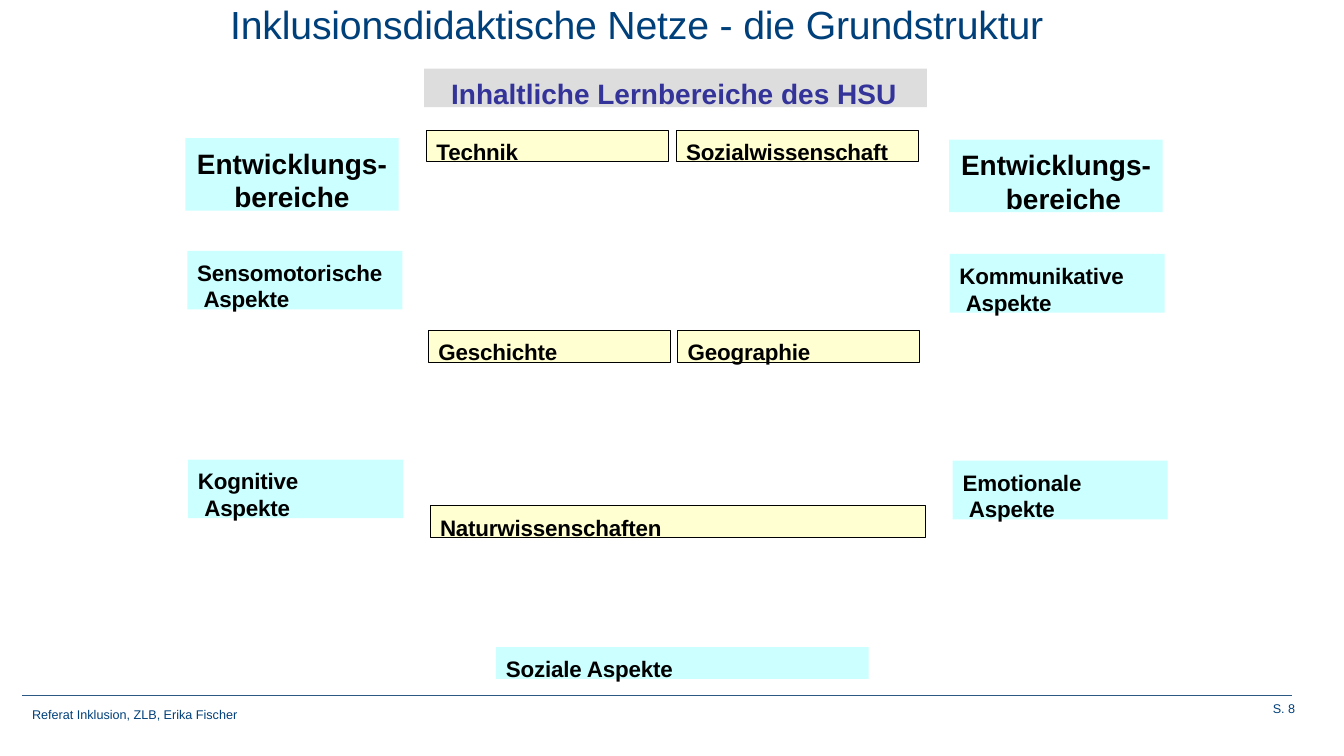
import pptx
import pptx.util
import pptx.dml.color
import pptx.enum.shapes
import pptx.enum.text
import lxml.etree
from pptx.util import Cm, Pt
from pptx.dml.color import RGBColor
from pptx.enum.text import PP_ALIGN

NAVY = RGBColor(0x00, 0x40, 0x7A)
RULE_BLUE = RGBColor(0x2C, 0x58, 0x84)
INDIGO = RGBColor(0x33, 0x33, 0x99)
BLACK = RGBColor(0, 0, 0)
CYAN = RGBColor(0xCC, 0xFF, 0xFF)
YELLOW = RGBColor(0xFF, 0xFF, 0xD1)
GREY = RGBColor(0xDD, 0xDD, 0xDD)

LABEL_INDENT = 0.25
ASPECT_INDENTS = (LABEL_INDENT, 0.41)
FIELD_WIDTH, FIELD_HEIGHT = 6.1, 0.8
ASPECT_WIDTH, ASPECT_HEIGHT = 5.42, 1.48


def write_lines(frame, lines, size, color, bold=False, spacing=0,
                align=PP_ALIGN.LEFT, indents=(0, 0)):
    """Fill the frame, one paragraph per line; spacing is in 1/100 pt, indents in cm."""
    frame.word_wrap = True
    frame.text = "\n".join(lines)
    for paragraph, indent in zip(frame.paragraphs, indents):
        paragraph.alignment = align
        properties = paragraph._p.get_or_add_pPr()
        properties.set("marL", str(Cm(indent)))
        properties.set("indent", "0")
        for run in paragraph.runs:
            run.font.name = "Arial"
            run.font.size = Pt(size)
            run.font.bold = bold
            run.font.color.rgb = color
            run._r.get_or_add_rPr().set("spc", str(spacing))


def add_box(slide, lines, left, top, width, height, fill, border=None,
            size=16, color=BLACK, **text_format):
    box = slide.shapes.add_shape(pptx.enum.shapes.MSO_SHAPE.RECTANGLE,
                                 Cm(left), Cm(top), Cm(width), Cm(height))
    box.shadow.inherit = False
    box.fill.solid()
    box.fill.fore_color.rgb = fill
    if border is None:
        box.line.fill.background()
    else:
        box.line.color.rgb = border
        box.line.width = Pt(0.75)
    frame = box.text_frame
    frame.vertical_anchor = pptx.enum.text.MSO_ANCHOR.TOP
    frame.margin_left = frame.margin_right = frame.margin_bottom = 0
    frame.margin_top = Cm(0.2)
    write_lines(frame, lines, size, color, bold=True, **text_format)


def add_field(slide, name, left, top, width=FIELD_WIDTH):
    add_box(slide, [name], left, top, width, FIELD_HEIGHT, YELLOW, BLACK,
            spacing=-10, indents=[LABEL_INDENT])


def add_aspect(slide, lines, left, top, width=ASPECT_WIDTH, height=ASPECT_HEIGHT):
    add_box(slide, lines, left, top, width, height, CYAN,
            spacing=-10, indents=ASPECT_INDENTS)


def add_development_heading(slide, left, top, **text_format):
    add_box(slide, ["Entwicklungs-", "bereiche"], left, top, 5.38, 1.83, CYAN,
            size=20, **text_format)


def add_caption(slide, text, left, top, width, height, size, **text_format):
    caption = slide.shapes.add_textbox(Cm(left), Cm(top), Cm(width), Cm(height))
    write_lines(caption.text_frame, [text], size, NAVY, **text_format)
    return caption.text_frame


def add_footer(slide):
    rule = slide.shapes.add_connector(pptx.enum.shapes.MSO_CONNECTOR.STRAIGHT,
                                      Cm(0.56), Cm(17.53), Cm(32.56), Cm(17.53))
    rule.line.color.rgb = RULE_BLUE
    rule.line.width = Pt(0.75)
    lxml.etree.SubElement(rule._element.spPr, pptx.oxml.ns.qn("a:effectLst"))
    add_caption(slide, "Referat Inklusion, ZLB, Erika Fischer", 0.56, 17.7, 24.9, 0.64, 9)
    add_caption(slide, "S. 8", 28.93, 17.53, 3.96, 0.84, 9, align=PP_ALIGN.RIGHT)


def main():
    presentation = pptx.Presentation()
    presentation.slide_width = Cm(33.87)
    presentation.slide_height = Cm(19.05)
    slide = presentation.slides.add_slide(presentation.slide_layouts[6])

    add_footer(slide)
    title = add_caption(slide, "Inklusionsdidaktische Netze - die Grundstruktur",
                        5.77, 0.05, 22.6, 1.12, 28, spacing=-10, indents=[0.03])
    title.vertical_anchor = pptx.enum.text.MSO_ANCHOR.MIDDLE
    title.margin_left = title.margin_right = title.margin_top = title.margin_bottom = 0

    add_box(slide, ["Inhaltliche Lernbereiche des HSU"], 10.69, 1.73, 12.67, 0.97,
            GREY, size=20, color=INDIGO, indents=[0.68])
    for name, left, top in (("Technik", 10.75, 3.28),
                            ("Sozialwissenschaft", 17.04, 3.28),
                            ("Geschichte", 10.8, 8.33),
                            ("Geographie", 17.08, 8.33)):
        add_field(slide, name, left, top)
    add_field(slide, "Naturwissenschaften", 10.84, 12.75, width=12.48)

    add_development_heading(slide, 4.67, 3.48, align=PP_ALIGN.CENTER)
    add_development_heading(slide, 23.92, 3.52, indents=(0.3, 1.43))
    for name, left, top in (("Sensomotorische", 4.72, 6.32),
                            ("Kommunikative", 23.93, 6.4),
                            ("Kognitive", 4.74, 11.58),
                            ("Emotionale", 24.01, 11.61)):
        add_aspect(slide, [name, "Aspekte"], left, top)
    add_aspect(slide, ["Soziale Aspekte"], 12.5, 16.31, width=9.39, height=0.8)

    presentation.save("out.pptx")


if __name__ == "__main__":
    main()
